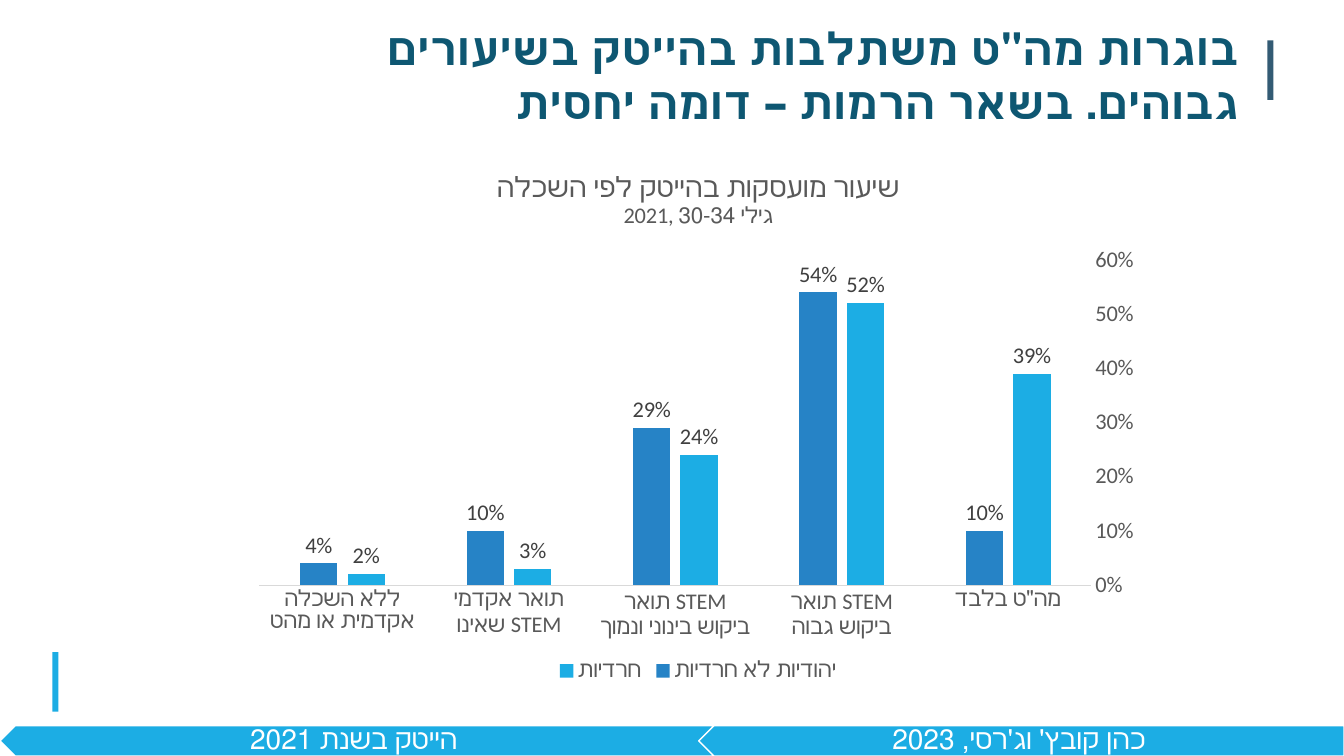
import pptx
import pptx.util
import pptx.chart.data
import pptx.dml.color
import pptx.enum.chart
import pptx.enum.shapes
import pptx.enum.text
import pptx.oxml
import pptx.oxml.ns

EMU_PER_PX = 9144
ALIGN = pptx.enum.text.PP_ALIGN
SHAPE = pptx.enum.shapes.MSO_SHAPE
XL = pptx.enum.chart
SKY, BLUE, SLATE, TEAL = "1CADE4", "2683C6", "335B74", "0E5772"
GREY, DARK, PALE, WHITE = "595959", "404040", "D9D9D9", "FFFFFF"


def px(n):
    return pptx.util.Emu(n * EMU_PER_PX)


def rgb(value):
    return pptx.dml.color.RGBColor.from_string(value)


def style_font(font, size, color, name="Calibri", bold=False):
    font.size = pptx.util.Pt(size)
    font.name = name
    font.bold = bold
    font.color.rgb = rgb(color)


def place_plot(chart, x, y, w, h):
    area = chart._chartSpace.chart.plotArea
    for old in area.findall(pptx.oxml.ns.qn("c:layout")):
        area.remove(old)
    sizes = "".join(f'<c:{k} val="{v}"/>' for k, v in zip("xywh", (x, y, w, h)))
    area.insert(0, pptx.oxml.parse_xml(
        f'<c:layout {pptx.oxml.ns.nsdecls("c")}><c:manualLayout>'
        '<c:layoutTarget val="inner"/><c:xMode val="edge"/><c:yMode val="edge"/>'
        f'{sizes}</c:manualLayout></c:layout>'))


def write(p, text, size, color, name="Calibri", bold=False, align=ALIGN.CENTER,
          rtl=True, spacing=None):
    p.alignment = align
    if rtl:
        p._p.get_or_add_pPr().set("rtl", "1")
    if spacing:
        p.line_spacing = spacing
    r = p.add_run()
    r.text = text
    style_font(r.font, size, color, name, bold)


class Deck:
    def __init__(self, width, height):
        self.prs = pptx.Presentation()
        self.prs.slide_width, self.prs.slide_height = px(width), px(height)
        self.s = self.prs.slides.add_slide(self.prs.slide_layouts[6])

    def shape(self, kind, box, fill, line=None, rotation=0):
        sp = self.s.shapes.add_shape(kind, *map(px, box))
        sp.shadow.inherit = False
        sp.rotation = rotation
        sp.fill.solid()
        sp.fill.fore_color.rgb = rgb(fill)
        if line:
            sp.line.color.rgb = rgb(line)
            sp.line.width = pptx.util.Pt(1)
        else:
            sp.line.fill.background()

    def text(self, box, text, size, color, margins=(10, 5, 10, 5),
             anchor=pptx.enum.text.MSO_ANCHOR.TOP, **fmt):
        tf = self.s.shapes.add_textbox(*map(px, box)).text_frame
        tf.word_wrap = True
        tf.vertical_anchor = anchor
        tf.margin_left, tf.margin_top, tf.margin_right, tf.margin_bottom = map(px, margins)
        write(tf.paragraphs[0], text, size, color, **fmt)

    def columns(self, box, title, categories, series):
        data = pptx.chart.data.CategoryChartData(number_format="0%")
        data.categories = categories
        for name, values, _ in series:
            data.add_series(name, values)
        chart = self.s.shapes.add_chart(
            XL.XL_CHART_TYPE.COLUMN_CLUSTERED, *map(px, box), data).chart
        style_font(chart.font, 16, GREY)
        place_plot(chart, 0.02, 0.2, 0.91, 0.61)

        chart.has_title = True
        tf = chart.chart_title.text_frame
        for i, (line, size) in enumerate(title):
            p = tf.add_paragraph() if i else tf.paragraphs[0]
            write(p, line, size, GREY, rtl=False)
        chart.chart_title.include_in_layout = False

        chart.has_legend = True
        chart.legend.position = XL.XL_LEGEND_POSITION.BOTTOM
        chart.legend.include_in_layout = False
        style_font(chart.legend.font, 16, GREY)

        cat, val = chart.category_axis, chart.value_axis
        for axis in (cat, val):
            axis.has_major_gridlines = False
            axis.major_tick_mark = XL.XL_TICK_MARK.NONE
            axis.minor_tick_mark = XL.XL_TICK_MARK.NONE
            style_font(axis.tick_labels.font, 16, GREY)
        cat.reverse_order = True
        cat.format.line.color.rgb = rgb(PALE)
        cat.format.line.width = pptx.util.Pt(0.75)
        val.format.line.fill.background()
        val.minimum_scale, val.maximum_scale, val.major_unit = 0, 0.6, 0.1
        val.tick_labels.number_format = "0%"
        val.tick_labels.number_format_is_linked = False

        plot = chart.plots[0]
        plot.vary_by_categories = False
        plot.gap_width, plot.overlap = 219, -27
        for bars, (_, _, color) in zip(plot.series, series):
            bars.format.fill.solid()
            bars.format.fill.fore_color.rgb = rgb(color)
            labels = bars.data_labels
            labels.show_value = True
            labels.position = XL.XL_LABEL_POSITION.OUTSIDE_END
            labels.number_format = "0%"
            labels.number_format_is_linked = False
            style_font(labels.font, 16, DARK)


def main():
    deck = Deck(1333, 750)
    deck.shape(SHAPE.RECTANGLE, (52, 647, 6, 59), SKY)
    deck.shape(SHAPE.RECTANGLE, (1257, 40, 6, 59), SLATE)

    footer = [
        (SHAPE.PENTAGON, 687, 646, 697, 636, 12, "כהן קובץ' וג'רסי, 2023"),
        (SHAPE.CHEVRON, 0, 708, 21, 666, 9, "הייטק בשנת 2021"),
    ]
    for kind, left, width, text_left, text_width, margin, text in footer:
        deck.shape(kind, (left, 720, width, 30), SKY, line=WHITE, rotation=180)
        deck.text((text_left, 720, text_width, 30), text, 20, WHITE,
                  margins=(3, 6, margin, 6), spacing=0.9,
                  anchor=pptx.enum.text.MSO_ANCHOR.MIDDLE)

    deck.text((299, 16, 940, 118),
              'בוגרות מה"ט משתלבות בהייטק בשיעורים גבוהים. בשאר הרמות – דומה יחסית',
              32, TEAL, name="Lato", bold=True, align=ALIGN.RIGHT)

    deck.columns(
        (239, 152, 907, 529),
        [("שיעור מועסקות בהייטק לפי השכלה", 20), ("2021, גילי 30-34", 16)],
        ['מה"ט בלבד', "תואר STEM ביקוש גבוה", "תואר STEM ביקוש בינוני ונמוך",
         "תואר אקדמי שאינו STEM", "ללא השכלה אקדמית או מהט"],
        [("חרדיות", (0.39, 0.52, 0.24, 0.03, 0.02), SKY),
         ("יהודיות לא חרדיות", (0.10, 0.54, 0.29, 0.10, 0.04), BLUE)])
    deck.prs.save("out.pptx")


if __name__ == "__main__":
    main()
